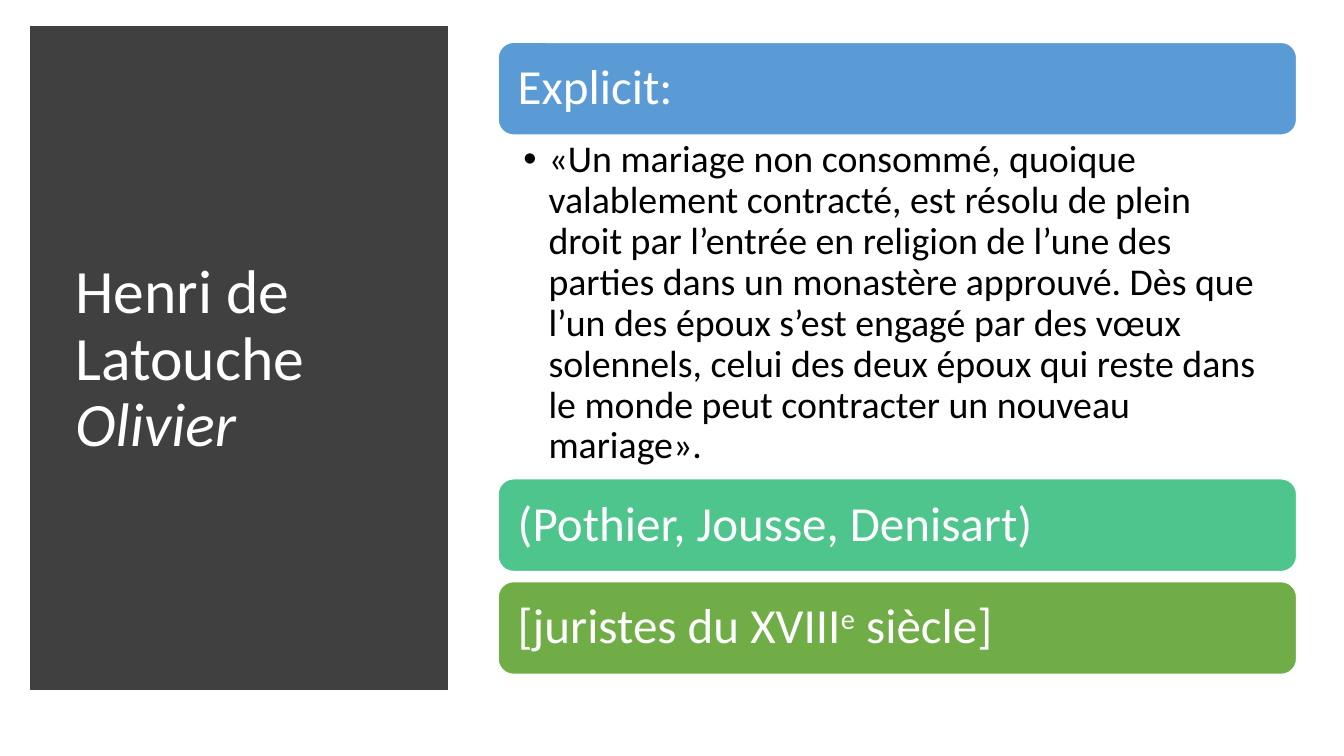
"""Builds the slide on the explicit of Henri de Latouche's Olivier."""
from lxml import etree
from pptx import Presentation
from pptx.dml.color import RGBColor
from pptx.enum.shapes import MSO_SHAPE
from pptx.enum.text import MSO_ANCHOR, PP_ALIGN
from pptx.oxml.ns import qn
from pptx.util import Inches, Pt

RECT, ROUNDED = MSO_SHAPE.RECTANGLE, MSO_SHAPE.ROUNDED_RECTANGLE
MIDDLE, TOP, LEFT = MSO_ANCHOR.MIDDLE, MSO_ANCHOR.TOP, PP_ALIGN.LEFT
COLORS = {"panel": "404040", "blue": "5B9BD5", "teal": "4DC58D",
          "green": "70AD47", "white": "FFFFFF", "black": "000000"}


def add_box(kind, box, fill, line, width):
    sp = s.shapes.add_shape(kind, *map(Inches, box))
    sp.shadow.inherit = False
    sp.fill.solid()
    sp.fill.fore_color.rgb = RGBColor.from_string(COLORS[fill])
    sp.line.color.rgb = RGBColor.from_string(COLORS[line])
    sp.line.width = Pt(width)
    etree.SubElement(sp.line._get_or_add_ln(), qn("a:miter"), lim="800000")
    return sp


def write(sp, runs, size, color="white", insets=(0.1, 0.05, 0.1, 0.05), anchor=MIDDLE):
    tf = sp.text_frame
    tf.word_wrap = True
    tf.vertical_anchor = anchor
    tf.margin_left, tf.margin_top, tf.margin_right, tf.margin_bottom = map(Inches, insets)
    p = tf.paragraphs[0]
    p.alignment = LEFT
    p.line_spacing = 0.9
    for text, style in runs:
        if style == "italic":
            p.add_line_break()
        r = p.add_run()
        r.text = text
        r.font.name = "Calibri"
        r.font.size = Pt(size)
        r.font.color.rgb = RGBColor.from_string(COLORS[color])
        r.font.italic = style == "italic"
        if style == "super":
            r._r.get_or_add_rPr().set("baseline", "30000")
    return p


prs = Presentation()
prs.slide_width, prs.slide_height = Inches(13.33), Inches(7.5)
s = prs.slides.add_slide(prs.slide_layouts[6])

add_box(RECT, (0.37, 0.33, 4, 6.45), "panel", "panel", 10)
title = s.shapes.add_textbox(*map(Inches, (0.65, 0.7, 3.46, 5.75)))
write(title, [("Henri de Latouche", None), ("Olivier", "italic")], 44)

banners = [
    (0.42, "blue", [("Explicit:", None)]),
    (4.75, "teal", [("(Pothier, Jousse, Denisart)", None)]),
    (5.77, "green", [("[juristes du XVIII", None), ("e", "super"), (" siècle]", None)]),
]
for top, color, runs in banners:
    banner = add_box(ROUNDED, (4.94, top, 7.92, 0.92), color, "white", 1)
    write(banner, runs, 35, insets=(0.15,) * 4)

quote = s.shapes.add_textbox(*map(Inches, (4.94, 1.34, 7.92, 3.41)))
p = write(quote, [(
    "«Un mariage non consommé, quoique valablement contracté, est résolu de plein droit "
    "par l’entrée en religion de l’une des parties dans un monastère approuvé. Dès que "
    "l’un des époux s’est engagé par des vœux solennels, celui des deux époux qui reste "
    "dans le monde peut contracter un nouveau mariage».", None)],
    27, "black", (0.25, 0.05, 0.27, 0.05), TOP)
pPr = p._p.get_or_add_pPr()
pPr.set("marL", str(Inches(0.25)))
pPr.set("indent", str(-Inches(0.25)))
etree.SubElement(pPr, qn("a:buFont"), typeface="Arial")
etree.SubElement(pPr, qn("a:buChar"), char="•")

prs.save("out.pptx")
